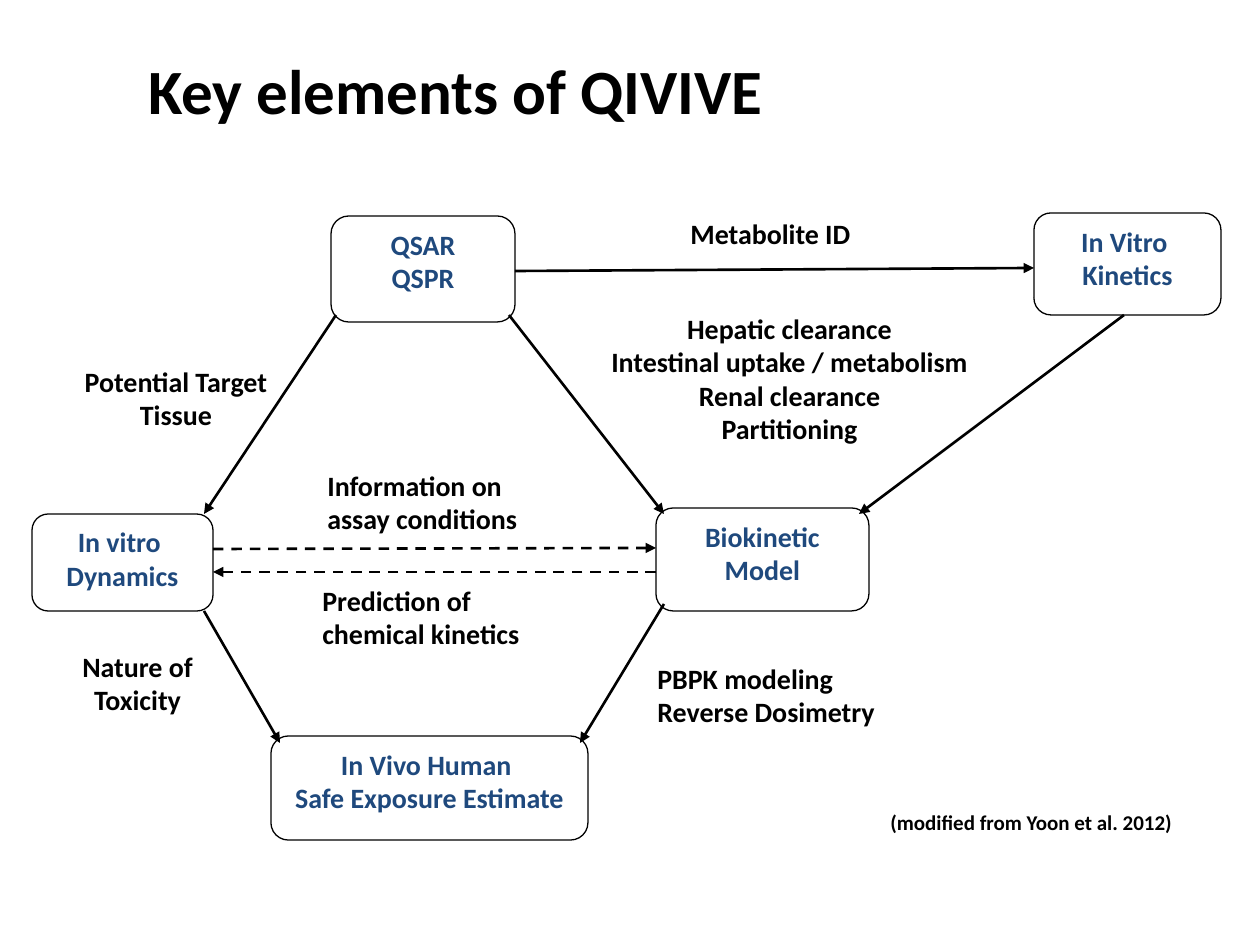
from lxml import etree
from pptx import Presentation
from pptx.dml.color import RGBColor
from pptx.enum import dml, shapes, text
from pptx.oxml import ns
from pptx.util import Pt

PX = 914400 / 126
THEME = {
    "font": "Calibri",
    "ink": RGBColor(0x00, 0x00, 0x00),
    "node": RGBColor(0x1F, 0x49, 0x7D),
    "paper": RGBColor(0xFF, 0xFF, 0xFF),
    "title": Pt(36),
    "body": Pt(16),
    "credit": Pt(12),
    "outline": Pt(0.75),
    "arrow": Pt(1.5),
}
LEFT, CENTER = text.PP_ALIGN.LEFT, text.PP_ALIGN.CENTER
TOP, MIDDLE = text.MSO_ANCHOR.TOP, text.MSO_ANCHOR.MIDDLE


def emu(*lengths):
    return [round(length * PX) for length in lengths]


def write(shape, lines, size="body", color="ink", align=LEFT, anchor=TOP, wrap=True):
    frame = shape.text_frame
    frame.word_wrap = wrap
    frame.vertical_anchor = anchor
    frame.text = "\n".join(lines)
    font_format = {"name": THEME["font"], "size": THEME[size], "bold": True}
    for paragraph in frame.paragraphs:
        paragraph.alignment = align
        for run in paragraph.runs:
            for name, value in font_format.items():
                setattr(run.font, name, value)
            run.font.color.rgb = THEME[color]


presentation = Presentation()
presentation.slide_width, presentation.slide_height = emu(1260, 945)
slide = presentation.slides.add_slide(presentation.slide_layouts[6])

# Title
title = slide.shapes.add_textbox(*emu(0, 10, 911, 158))
write(title, ["Key elements of QIVIVE"], size="title", align=CENTER, anchor=MIDDLE)

# Model elements
nodes = [
    ((656, 508, 213, 103), ["Biokinetic Model"]),
    ((271, 736, 317, 104), ["In Vivo Human ", "Safe Exposure Estimate"]),
    ((32, 514, 181, 97), ["In vitro ", "Dynamics"]),
    ((1034, 213, 187, 102), ["In Vitro ", "Kinetics"]),
    ((331, 216, 184, 106), ["QSAR", "QSPR"]),
]
for box, lines in nodes:
    node = slide.shapes.add_shape(shapes.MSO_SHAPE.ROUNDED_RECTANGLE, *emu(*box))
    node.shadow.inherit = False
    node.fill.solid()
    node.fill.fore_color.rgb = THEME["paper"]
    node.line.color.rgb = THEME["ink"]
    node.line.width = THEME["outline"]
    write(node, lines, color="node", align=CENTER)

# Arrows between elements: start, end, dashed
arrows = [
    ((515, 271), (1034, 268), False),
    ((336, 315), (204, 514), False),
    ((664, 604), (580, 743), False),
    ((204, 611), (280, 743), False),
    ((213, 549), (656, 548), True),
    ((656, 572), (213, 572), True),
    ((1124, 315), (859, 514), False),
    ((509, 315), (664, 514), False),
]
for start, end, dashed in arrows:
    arrow = slide.shapes.add_connector(shapes.MSO_CONNECTOR.STRAIGHT, *emu(*start, *end))
    arrow.line.color.rgb = THEME["ink"]
    arrow.line.width = THEME["arrow"]
    if dashed:
        arrow.line.dash_style = dml.MSO_LINE.DASH
    etree.SubElement(arrow.line._get_or_add_ln(), ns.qn("a:tailEnd"), type="triangle")
    etree.SubElement(arrow._element.spPr, ns.qn("a:effectLst"))

# Labels beside the arrows
labels = [
    ((63, 358, 226, 88), CENTER, ["Potential Target Tissue"]),
    ((678, 210, 244, 50), LEFT, ["Metabolite ID"]),
    ((315, 462, 255, 62), LEFT, ["Information on assay conditions"]),
    ((310, 577, 277, 54), LEFT, ["Prediction of chemical kinetics"]),
    ((53, 643, 169, 118), CENTER, ["Nature of Toxicity"]),
    ((559, 305, 461, 158), CENTER,
     ["Hepatic clearance", "Intestinal uptake / metabolism", "Renal clearance", "Partitioning"]),
    ((645, 655, 257, 50), LEFT, ["PBPK modeling", "Reverse Dosimetry"]),
]
for box, align, lines in labels:
    write(slide.shapes.add_textbox(*emu(*box)), lines, align=align)

# Credit
credit = slide.shapes.add_textbox(*emu(878, 803, 311, 38))
write(credit, ["(modified from Yoon et al. 2012)"], size="credit", wrap=False)

presentation.save("out.pptx")
